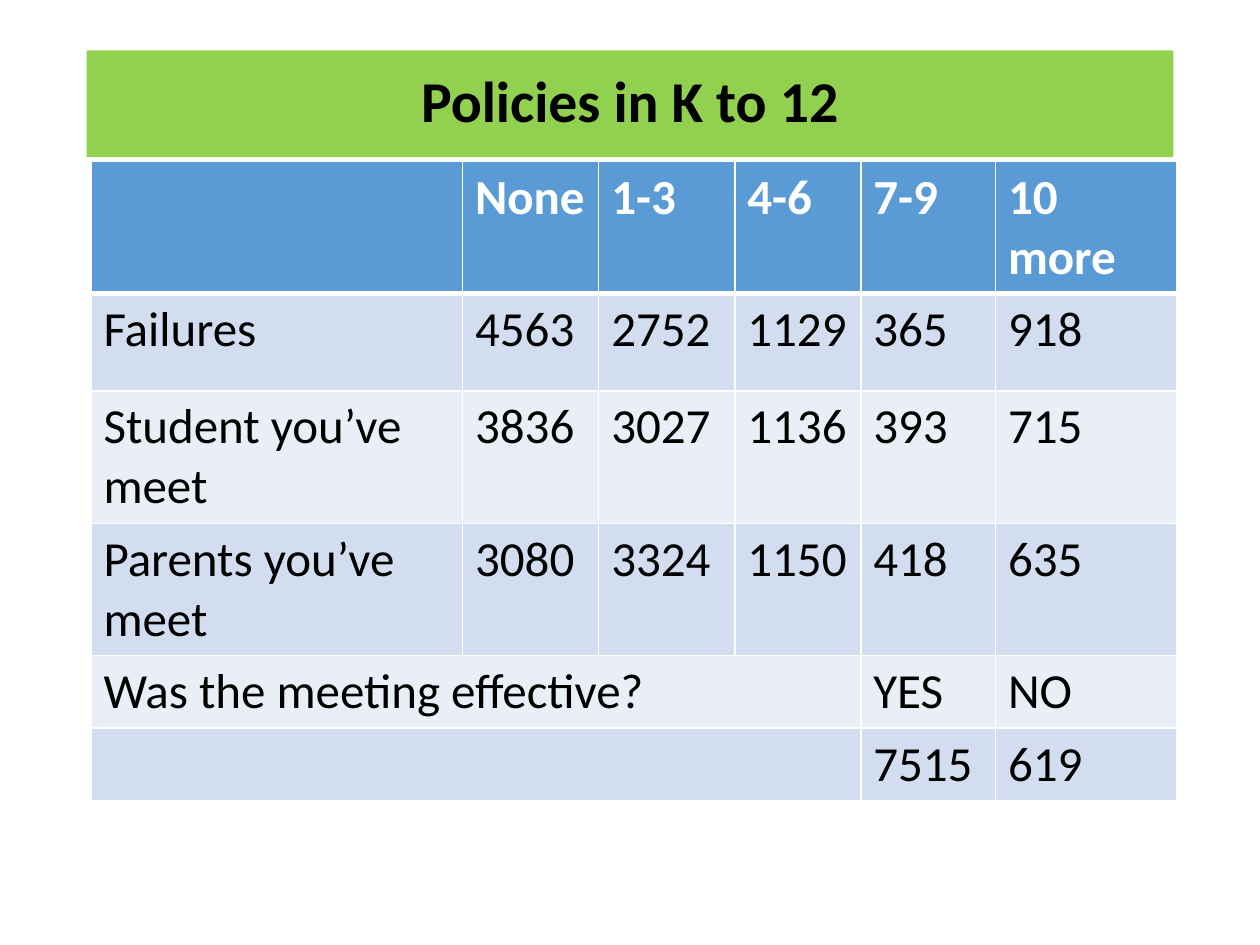
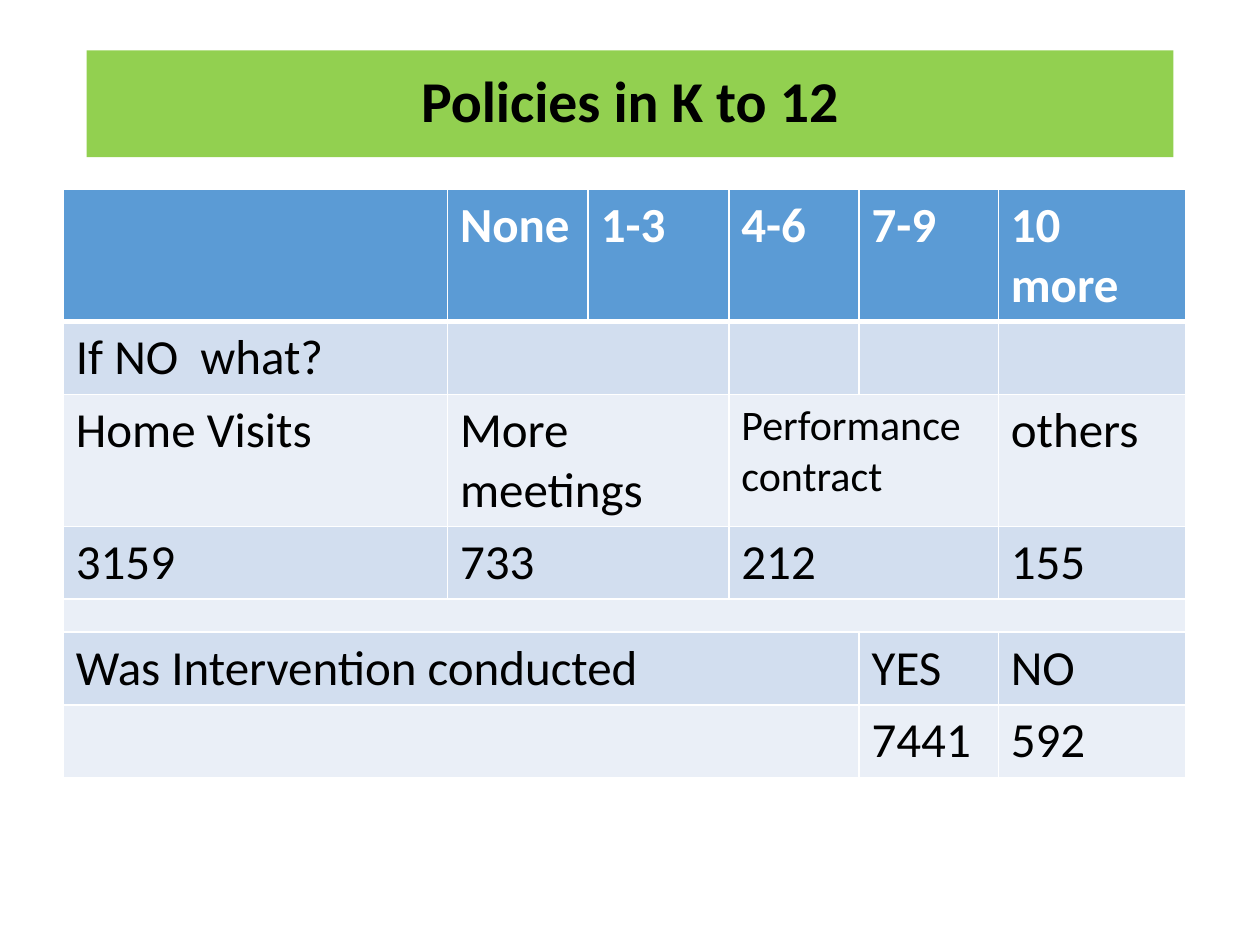
from dataclasses import dataclass

from lxml import etree
from pptx import Presentation
from pptx.dml.color import RGBColor
from pptx.enum.shapes import MSO_SHAPE
from pptx.enum.text import MSO_ANCHOR, PP_ALIGN
from pptx.oxml.ns import qn
from pptx.slide import Slide
from pptx.table import _Cell
from pptx.util import Pt

RECTANGLE = MSO_SHAPE.RECTANGLE
MIDDLE = MSO_ANCHOR.MIDDLE
CENTER = PP_ALIGN.CENTER

FONT = "Calibri"
TITLE = "Policies in K to 12"
TITLE_FILL = "92D050"
HEADER_FILL = "5B9BD5"
BAND_FILLS = ("EAEFF7", "D2DEEF")
BLACK = "000000"
WHITE = "FFFFFF"

BODY_SIZE = 28
ONE_LINE = 41.4
TWO_LINES = 75.6
COLUMN_SHARES = (212.4, 77.8, 77.8, 72, 77, 103.7)
THIN_BORDER = 1
HEADER_BORDER = 3


@dataclass(frozen=True)
class Entry:
    text: str = ""
    span: int = 1
    size: float = BODY_SIZE


@dataclass(frozen=True)
class Row:
    height: float
    entries: tuple[Entry, ...]


@dataclass(frozen=True)
class PolicyTable:
    left: float
    top: float
    width: float
    rows: tuple[Row, ...]


def plain_row(height: float, *texts: str) -> Row:
    return Row(height, tuple(Entry(text) for text in texts))


def answer_rows(question: str, yes: str, no: str) -> tuple[Row, ...]:
    lines = ((question, "YES", "NO"), ("", yes, no))
    return tuple(
        Row(ONE_LINE, (Entry(label, 4), Entry(left), Entry(right)))
        for label, left, right in lines
    )


HEADER = plain_row(TWO_LINES, "", "None", "1-3", "4-6", "7-9", "10 more")

MEETINGS = PolicyTable(52, 92.2, 620.6, (
    HEADER,
    plain_row(55.5, "Failures", "4563", "2752", "1129", "365", "918"),
    plain_row(TWO_LINES, "Student you’ve meet", "3836", "3027", "1136", "393", "715"),
    plain_row(TWO_LINES, "Parents you’ve meet", "3080", "3324", "1150", "418", "635"),
    *answer_rows("Was the meeting effective?", "7515", "619"),
))

INTERVENTIONS = PolicyTable(36.2, 108.2, 641.5, (
    HEADER,
    Row(ONE_LINE, (Entry("If NO  what?"), Entry(span=2), Entry(), Entry(), Entry())),
    Row(TWO_LINES, (
        Entry("Home Visits"),
        Entry("More meetings", 2),
        Entry("Performance contract", 2, 24),
        Entry("others"),
    )),
    Row(ONE_LINE, (Entry("3159"), Entry("733", 2), Entry("212", 2), Entry("155"))),
    Row(18.9, (Entry(span=6, size=9),)),
    *answer_rows("Was Intervention conducted", "7441", "592"),
))


def color(value: str) -> RGBColor:
    return RGBColor.from_string(value)


def add_title(slide: Slide) -> None:
    shape = slide.shapes.add_shape(RECTANGLE, Pt(49.5), Pt(28.8), Pt(621), Pt(61))
    shape.shadow.inherit = False
    shape.fill.solid()
    shape.fill.fore_color.rgb = color(TITLE_FILL)
    shape.line.fill.background()
    frame = shape.text_frame
    frame.word_wrap = True
    frame.vertical_anchor = MIDDLE
    paragraph = frame.paragraphs[0]
    paragraph.text = TITLE
    paragraph.alignment = CENTER
    paragraph.line_spacing = 0.9
    paragraph.font.name = FONT
    paragraph.font.size = Pt(33)
    paragraph.font.bold = True
    paragraph.font.color.rgb = color(BLACK)


def set_borders(cell: _Cell, top: float, bottom: float) -> None:
    properties = cell._tc.get_or_add_tcPr()
    widths = {"L": THIN_BORDER, "R": THIN_BORDER, "T": top, "B": bottom}
    for side, width in widths.items():
        line = etree.SubElement(properties, qn(f"a:ln{side}"), w=str(Pt(width)))
        fill = etree.SubElement(line, qn("a:solidFill"))
        etree.SubElement(fill, qn("a:srgbClr"), val=WHITE)


def style_cell(cell: _Cell, row_index: int, text: str, size: float) -> None:
    is_header = row_index == 0
    set_borders(
        cell,
        HEADER_BORDER if row_index == 1 else THIN_BORDER,
        HEADER_BORDER if is_header else THIN_BORDER,
    )
    cell.fill.solid()
    cell.fill.fore_color.rgb = color(HEADER_FILL if is_header else BAND_FILLS[row_index % 2])
    paragraph = cell.text_frame.paragraphs[0]
    paragraph.font.name = FONT
    paragraph.font.size = Pt(size)
    paragraph.font.bold = is_header
    paragraph.font.color.rgb = color(WHITE if is_header else BLACK)
    if text:
        paragraph.text = text
    else:
        etree.SubElement(paragraph._p, qn("a:endParaRPr"), sz=str(int(size * 100)))


def add_policy_table(slide: Slide, policy: PolicyTable) -> None:
    height = sum(row.height for row in policy.rows)
    table = slide.shapes.add_table(
        len(policy.rows), len(COLUMN_SHARES),
        Pt(policy.left), Pt(policy.top), Pt(policy.width), Pt(height),
    ).table
    for column, share in zip(table.columns, COLUMN_SHARES):
        column.width = Pt(policy.width * share / sum(COLUMN_SHARES))
    for row_index, row in enumerate(policy.rows):
        table.rows[row_index].height = Pt(row.height)
        start = 0
        for entry in row.entries:
            end = start + entry.span
            for column_index in range(start, end):
                text = entry.text if column_index == start else ""
                style_cell(table.cell(row_index, column_index), row_index, text, entry.size)
            if entry.span > 1:
                table.cell(row_index, start).merge(table.cell(row_index, end - 1))
            start = end


def main() -> None:
    presentation = Presentation()
    presentation.slide_width = Pt(720)
    presentation.slide_height = Pt(540)
    blank_layout = presentation.slide_layouts[6]
    for policy in (MEETINGS, INTERVENTIONS):
        slide = presentation.slides.add_slide(blank_layout)
        add_title(slide)
        add_policy_table(slide, policy)
    presentation.save("out.pptx")


if __name__ == "__main__":
    main()
